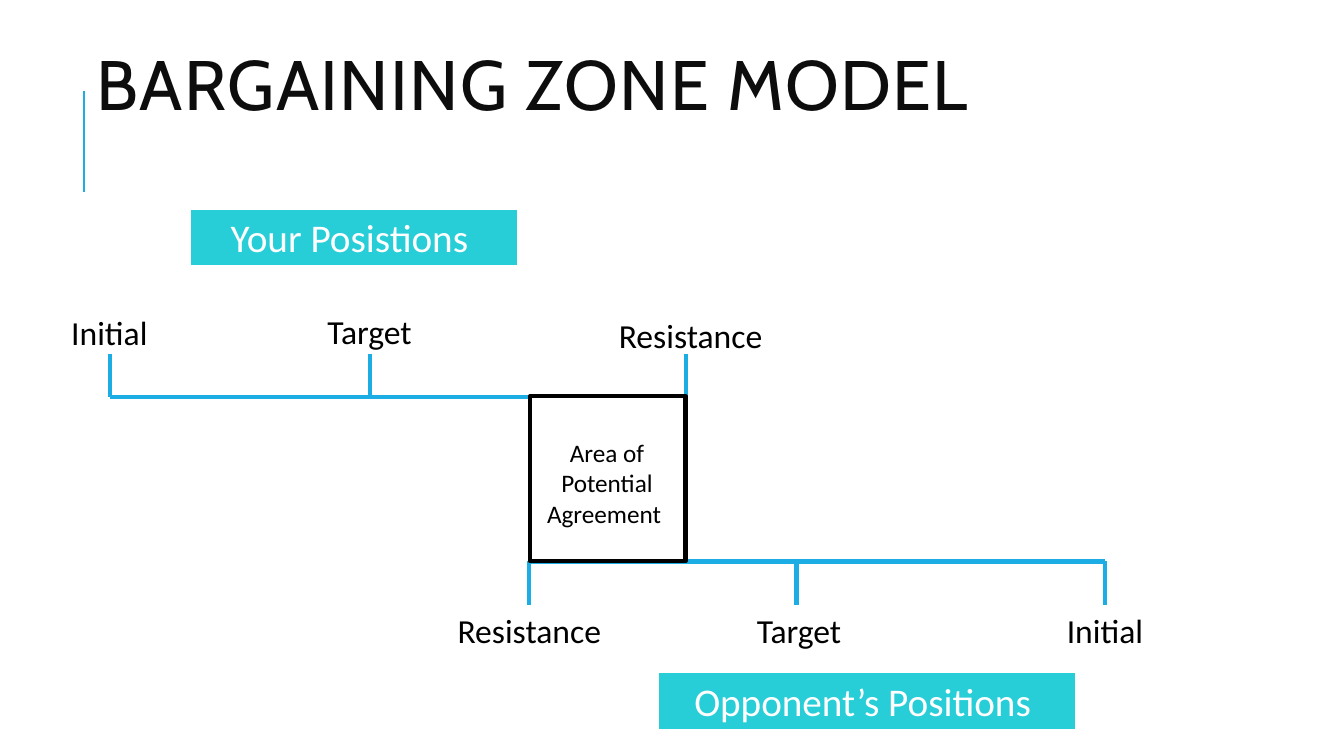
from lxml.etree import SubElement
from pptx import Presentation
from pptx.dml.color import RGBColor
from pptx.enum.shapes import MSO_CONNECTOR, MSO_SHAPE
from pptx.enum.text import MSO_ANCHOR, PP_ALIGN
from pptx.oxml.ns import qn
from pptx.util import Inches, Pt

BLUE, TEAL, BLACK, WHITE = "1CADE4", "27CED7", "000000", "FFFFFF"


def add_line(x1, y1, x2, y2, width=3):
    c = s.shapes.add_connector(MSO_CONNECTOR.STRAIGHT, Inches(x1), Inches(y1), Inches(x2), Inches(y2))
    c.line.color.rgb = RGBColor.from_string(BLUE)
    c.line.width = Pt(width)
    SubElement(c._element.spPr, qn("a:effectLst"))


def add_box(x, y, w, h, text="", size=24, color=BLACK, font="Calibri", fill=None,
            line=None, line_width=1.5, align=PP_ALIGN.CENTER, anchor=MSO_ANCHOR.TOP):
    """Add a text box, or a filled rectangle when fill is given."""
    place = Inches(x), Inches(y), Inches(w), Inches(h)
    if fill:
        sp = s.shapes.add_shape(MSO_SHAPE.RECTANGLE, *place)
        sp.shadow.inherit = False
        sp.fill.solid()
        sp.fill.fore_color.rgb = RGBColor.from_string(fill)
        sp.line.color.rgb = RGBColor.from_string(line)
        sp.line.width = Pt(line_width)
    else:
        sp = s.shapes.add_textbox(*place)
    tf = sp.text_frame
    tf.word_wrap = True
    tf.vertical_anchor = anchor
    p = tf.paragraphs[0]
    p.alignment = align
    if text:
        r = p.add_run()
        r.text = text
        r.font.size = Pt(size)
        r.font.name = font
        r.font.color.rgb = RGBColor.from_string(color)
    return p


prs = Presentation()
prs.slide_width, prs.slide_height = Inches(13.33), Inches(7.5)
s = prs.slides.add_slide(prs.slide_layouts[6])

# Title with its accent line
add_line(0.83, 1.9, 0.83, 0.9, width=1.5)
p = add_box(0.86, 0.17, 11.5, 1.45, "BARGAINING ZONE MODEL", size=50, color="0D0D0D",
            font="Cabin", align=PP_ALIGN.LEFT, anchor=MSO_ANCHOR.MIDDLE)
p.line_spacing = 0.8
p.runs[0].font._element.set("spc", "100")

# Scales: axis start, axis end, axis height, tick end, tick positions
scales = [
    (1.09, 6.8, 3.94, 3.51, (1.09, 3.67, 6.8)),
    (5.24, 10.96, 5.57, 6, (5.25, 7.9, 10.96)),
]
for start, end, axis_y, tick_y, ticks in scales:
    add_line(start, axis_y, end, axis_y)
    for x in ticks:
        add_line(x, axis_y, x, tick_y)

# Overlap of the two scales
add_box(5.26, 3.93, 1.54, 1.64, fill=WHITE, line=BLACK, line_width=3)
add_box(5.25, 4.29, 1.54, 1.31, "Area of Potential Agreement ", size=18)

# Tick labels
for text, x, y, w in [
    ("Initial", 0.12, 3.05, 1.93),
    ("Target", 2.67, 3.04, 1.99),
    ("Resistance", 5.77, 3.08, 2.16),
    ("Resistance", 4.06, 6, 2.38),
    ("Target", 6.97, 6, 1.91),
    ("Initial", 9.91, 6, 2.1),
]:
    add_box(x, y, w, 0.5, text)

# Party banners
for text, x, y, w in [
    ("Your Posistions ", 1.88, 2.07, 3.26),
    ("Opponent’s Positions ", 6.53, 6.67, 4.14),
]:
    add_box(x, y, w, 0.57, text, size=28, color=WHITE, fill=TEAL, line=WHITE)

prs.save("out.pptx")
